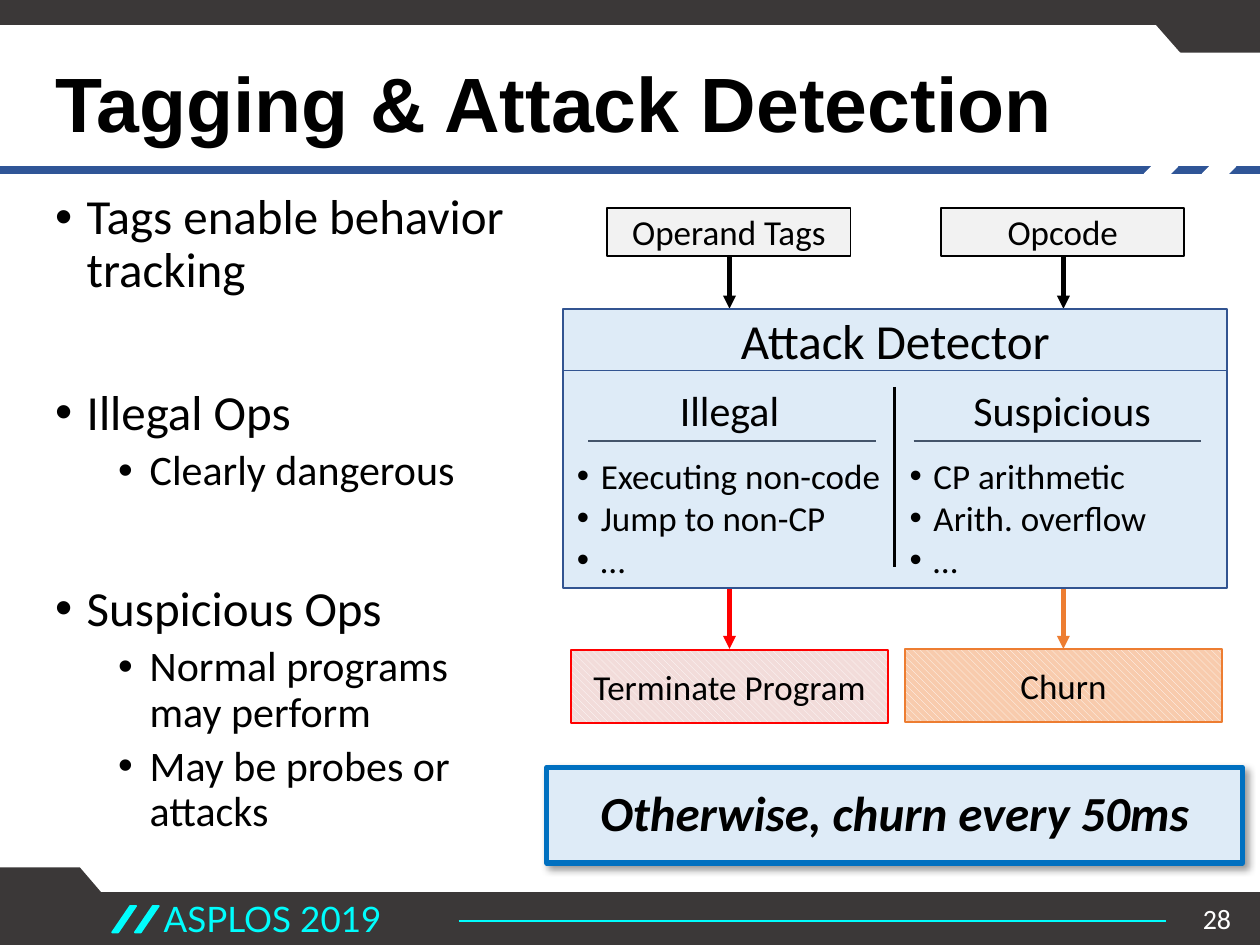
from lxml import etree
from pptx import Presentation
from pptx.dml.color import RGBColor
from pptx.enum.dml import MSO_PATTERN
from pptx.enum.shapes import MSO_CONNECTOR, MSO_SHAPE
from pptx.enum.text import MSO_ANCHOR, MSO_AUTO_SIZE, PP_ALIGN
from pptx.oxml.ns import qn
from pptx.util import Inches, Pt

RECTANGLE = MSO_SHAPE.RECTANGLE
PARALLELOGRAM = MSO_SHAPE.PARALLELOGRAM
SNIPPED = MSO_SHAPE.SNIP_2_DIAG_RECTANGLE
STRAIGHT = MSO_CONNECTOR.STRAIGHT
STRIPES = MSO_PATTERN.WIDE_DOWNWARD_DIAGONAL
MIDDLE, TOP = MSO_ANCHOR.MIDDLE, MSO_ANCHOR.TOP
LEFT, CENTER, RIGHT = PP_ALIGN.LEFT, PP_ALIGN.CENTER, PP_ALIGN.RIGHT
NO_FIT = MSO_AUTO_SIZE.NONE

BLACK = RGBColor(0x00, 0x00, 0x00)
WHITE = RGBColor(0xFF, 0xFF, 0xFF)
CHARCOAL = RGBColor(0x3B, 0x38, 0x38)
CYAN = RGBColor(0x00, 0xFD, 0xFD)
NAVY = RGBColor(0x2F, 0x55, 0x97)
PALE_BLUE = RGBColor(0xDE, 0xEB, 0xF7)
BORDER_BLUE = RGBColor(0x32, 0x54, 0x91)
BRIGHT_BLUE = RGBColor(0x00, 0x70, 0xC0)
SLATE = RGBColor(0x44, 0x54, 0x6A)
PALE_GRAY = RGBColor(0xF2, 0xF2, 0xF2)
RED = RGBColor(0xFF, 0x00, 0x00)
PALE_RED = RGBColor(0xF2, 0xDC, 0xDA)
ORANGE = RGBColor(0xED, 0x7D, 0x31)
PALE_ORANGE = RGBColor(0xF8, 0xCB, 0xAD)

COLUMN_CENTERS = (5.79, 8.44)
COLUMN_LEFTS = (4.48, 7.12)
COLUMN_WIDTH = 2.62


def add_span(para, text, size, color=BLACK, font="Calibri", bold=False, italic=False):
    span = para.add_run()
    span.text = text
    span.font.name = font
    span.font.size = Pt(size)
    span.font.bold = bold
    span.font.italic = italic
    span.font.color.rgb = color


def add_bullet(para, left, hanging):
    properties = para._p.get_or_add_pPr()
    properties.set("marL", str(Inches(left)))
    properties.set("indent", str(-Inches(hanging)))
    etree.SubElement(properties, qn("a:buFont")).set("typeface", "Arial")
    etree.SubElement(properties, qn("a:buChar")).set("char", "•")


def add_box(slide, kind, left, top, width, height, fill, line, weight=1, striped=False):
    box = slide.shapes.add_shape(kind, Inches(left), Inches(top), Inches(width), Inches(height))
    style_box(box, fill, line, weight, striped)
    return box


def style_box(box, fill, line, weight=1, striped=False):
    box.shadow.inherit = False
    if striped:
        box.fill.patterned()
        box.fill.pattern = STRIPES
        box.fill.fore_color.rgb = WHITE
        box.fill.back_color.rgb = fill
    else:
        box.fill.solid()
        box.fill.fore_color.rgb = fill
    box.line.color.rgb = line
    box.line.width = Pt(weight)


def label_box(box, text, size, bold=False, italic=False):
    frame = box.text_frame
    frame.word_wrap = True
    frame.vertical_anchor = MIDDLE
    para = frame.paragraphs[0]
    para.alignment = CENTER
    add_span(para, text, size, bold=bold, italic=italic)


def add_corner(slide, points):
    start, *rest = [(Inches(x), Inches(y)) for x, y in points]
    builder = slide.shapes.build_freeform(*start)
    builder.add_line_segments(rest, close=True)
    style_box(builder.convert_to_shape(), CHARCOAL, CHARCOAL)


def add_line(slide, x1, y1, x2, y2, color, weight, arrow=False):
    line = slide.shapes.add_connector(STRAIGHT, Inches(x1), Inches(y1), Inches(x2), Inches(y2))
    line.line.color.rgb = color
    line.line.width = Pt(weight)
    if arrow:
        etree.SubElement(line.line._get_or_add_ln(), qn("a:tailEnd")).set("type", "triangle")
    etree.SubElement(line._element.spPr, qn("a:effectLst"))


def add_text_frame(slide, left, top, width, height, wrap=True, anchor=TOP):
    box = slide.shapes.add_textbox(Inches(left), Inches(top), Inches(width), Inches(height))
    box.text_frame.word_wrap = wrap
    box.text_frame.vertical_anchor = anchor
    return box.text_frame


def add_text(slide, left, top, width, height, text, size, color=BLACK, font="Calibri",
             align=LEFT, wrap=True, anchor=TOP):
    para = add_text_frame(slide, left, top, width, height, wrap, anchor).paragraphs[0]
    para.alignment = align
    add_span(para, text, size, color, font)


def next_para(frame, index):
    return frame.add_paragraph() if index else frame.paragraphs[0]


def add_theme(slide):
    add_corner(slide, [(0, 7.31), (0, 6.89), (0.63, 6.89), (0.99, 7.31)])
    add_box(slide, RECTANGLE, 0, 7.09, 10, 0.41, CHARCOAL, CHARCOAL)
    add_line(slide, 3.64, 7.31, 9.25, 7.31, CYAN, 1)
    add_corner(slide, [(10, 0), (10, 0.41), (9.37, 0.41), (9.01, 0)])
    add_box(slide, RECTANGLE, 0, 0, 10, 0.19, CHARCOAL, CHARCOAL)
    for left in (0.89, 1.07):
        slash = add_box(slide, PARALLELOGRAM, left, 7.19, 0.19, 0.21, CYAN, CYAN)
        slash.adjustments[0] = 0.75
    add_text(slide, 1.2, 7.07, 2.48, 0.44, "ASPLOS 2019", 20, CYAN, "Lato", wrap=False)
    add_line(slide, 0, 1.35, 10, 1.35, NAVY, 4.5)
    for left in (9.56, 9.1):
        notch = add_box(slide, RECTANGLE, left, 1.28, 0.23, 0.14, WHITE, WHITE)
        notch.rotation = 315
    add_text(slide, 9.31, 7.09, 0.56, 0.4, "28", 16, WHITE, align=RIGHT, anchor=MIDDLE)


def add_title(slide, text):
    title = slide.shapes.title
    title.left, title.top = Inches(0.34), Inches(0.4)
    title.width, title.height = Inches(9.33), Inches(0.9)
    frame = title.text_frame
    frame.auto_size = NO_FIT
    frame.vertical_anchor = MIDDLE
    para = frame.paragraphs[0]
    para.alignment = LEFT
    para.line_spacing = 0.9
    add_span(para, text, 44, font="Arial", bold=True)


def add_outline(slide, entries):
    frame = add_text_frame(slide, 0.34, 1.48, 4.06, 5.27)
    for index, (level, lines) in enumerate(entries):
        para = next_para(frame, index)
        para.level = level
        para.line_spacing = 0.9
        if index:
            para.space_before = Pt(5 if level else 51)
        add_bullet(para, 0.25 + 0.5 * level, 0.25)
        for number, text in enumerate(lines):
            if number:
                para.add_line_break()
            add_span(para, text, 24 if level else 28)


def add_column(slide, left, heading, items):
    add_text(slide, left, 3, COLUMN_WIDTH, 0.5, heading, 24, align=CENTER)
    frame = add_text_frame(slide, left, 3.56, COLUMN_WIDTH, 1.11)
    for index, item in enumerate(items):
        para = next_para(frame, index)
        add_bullet(para, 0.19, 0.19)
        add_span(para, item, 20)


def add_detector(slide):
    for center, color in zip(COLUMN_CENTERS, (RED, ORANGE)):
        add_line(slide, center, 4.67, center, 5.15, color, 2.5, arrow=True)
        add_line(slide, center, 2.03, center, 2.45, BLACK, 2.5, arrow=True)
    label_box(add_box(slide, RECTANGLE, 4.47, 2.45, 5.27, 0.49, PALE_BLUE, BORDER_BLUE),
              "Attack Detector", 28)
    for left, text in ((4.82, "Operand Tags"), (7.47, "Opcode")):
        label_box(add_box(slide, RECTANGLE, left, 1.65, 1.93, 0.38, PALE_GRAY, BLACK), text, 20)
    add_box(slide, RECTANGLE, 4.47, 2.94, 5.27, 1.73, PALE_BLUE, BORDER_BLUE)
    add_line(slide, 7.1, 3.07, 7.1, 4.5, BLACK, 1.5)
    add_column(slide, COLUMN_LEFTS[0], "Illegal", ("Executing non-code", "Jump to non-CP", "…"))
    add_column(slide, COLUMN_LEFTS[1], "Suspicious", ("CP arithmetic", "Arith. overflow", "…"))
    for left, top, text, fill, line in ((4.53, 5.16, "Terminate Program", PALE_RED, RED),
                                        (7.18, 5.15, "Churn", PALE_ORANGE, ORANGE)):
        label_box(add_box(slide, RECTANGLE, left, top, 2.52, 0.58, fill, line, striped=True), text, 20)
    for left in (4.67, 7.25):
        add_line(slide, left, 3.5, left + 2.28, 3.5, SLATE, 1)


def add_takeaway(slide, text):
    box = add_box(slide, SNIPPED, 4.34, 6.09, 5.52, 0.76, PALE_BLUE, BRIGHT_BLUE, 3)
    box.adjustments[0] = box.adjustments[1] = 0
    effects = box._element.spPr.find(qn("a:effectLst"))
    shadow = etree.SubElement(effects, qn("a:outerShdw"), blurRad=str(Pt(4)), dist=str(Pt(3)),
                              dir="2700000", algn="tl", rotWithShape="0")
    color = etree.SubElement(shadow, qn("a:srgbClr"), val=str(BLACK))
    etree.SubElement(color, qn("a:alpha"), val="40000")
    box.text_frame.margin_left = box.text_frame.margin_right = 0
    label_box(box, text, 28, bold=True, italic=True)
    box.text_frame.paragraphs[0].line_spacing = 0.9


def main():
    deck = Presentation()
    deck.slide_width, deck.slide_height = Inches(10), Inches(7.5)
    slide = deck.slides.add_slide(deck.slide_layouts[5])
    add_theme(slide)
    add_title(slide, "Tagging & Attack Detection")
    add_outline(slide, [
        (0, ["Tags enable behavior tracking"]),
        (0, ["Illegal Ops"]), (1, ["Clearly dangerous"]),
        (0, ["Suspicious Ops"]), (1, ["Normal programs", "may perform"]),
        (1, ["May be probes or attacks"])])
    add_detector(slide)
    add_takeaway(slide, "Otherwise, churn every 50ms")
    deck.save("out.pptx")


if __name__ == "__main__":
    main()
